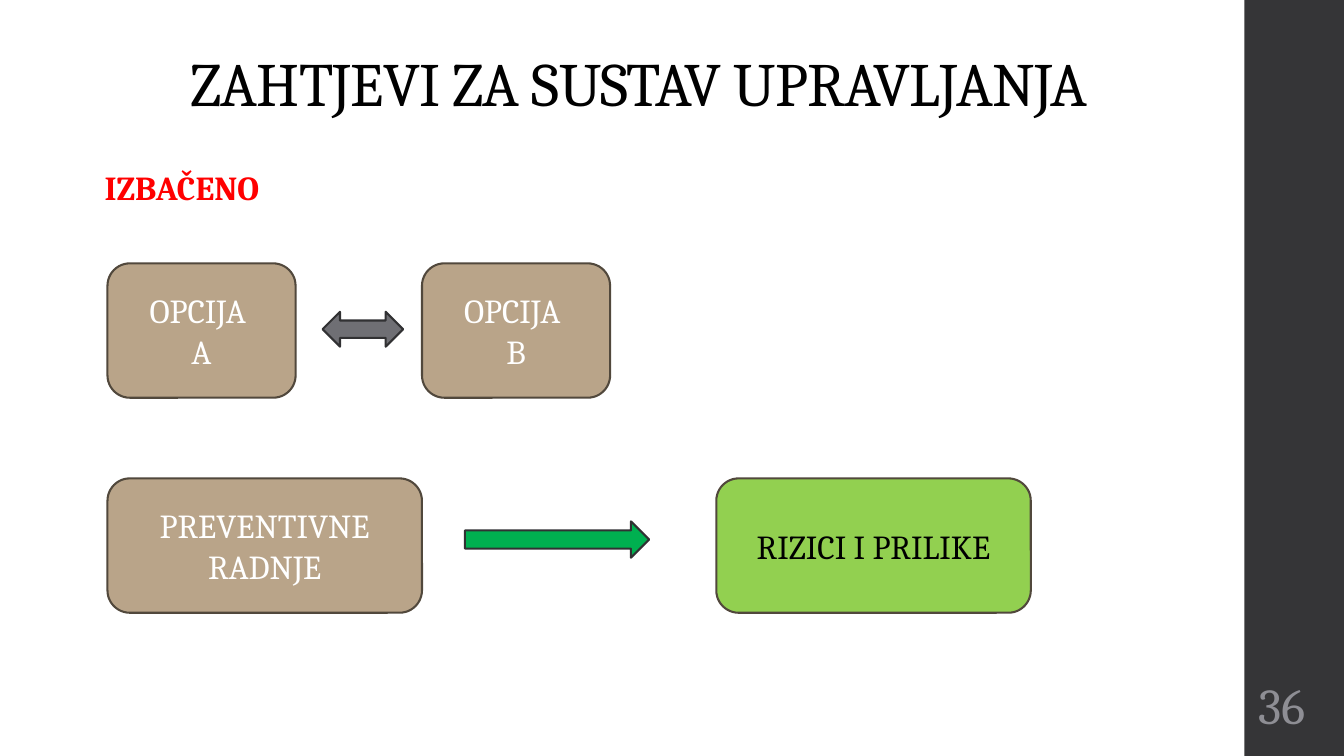
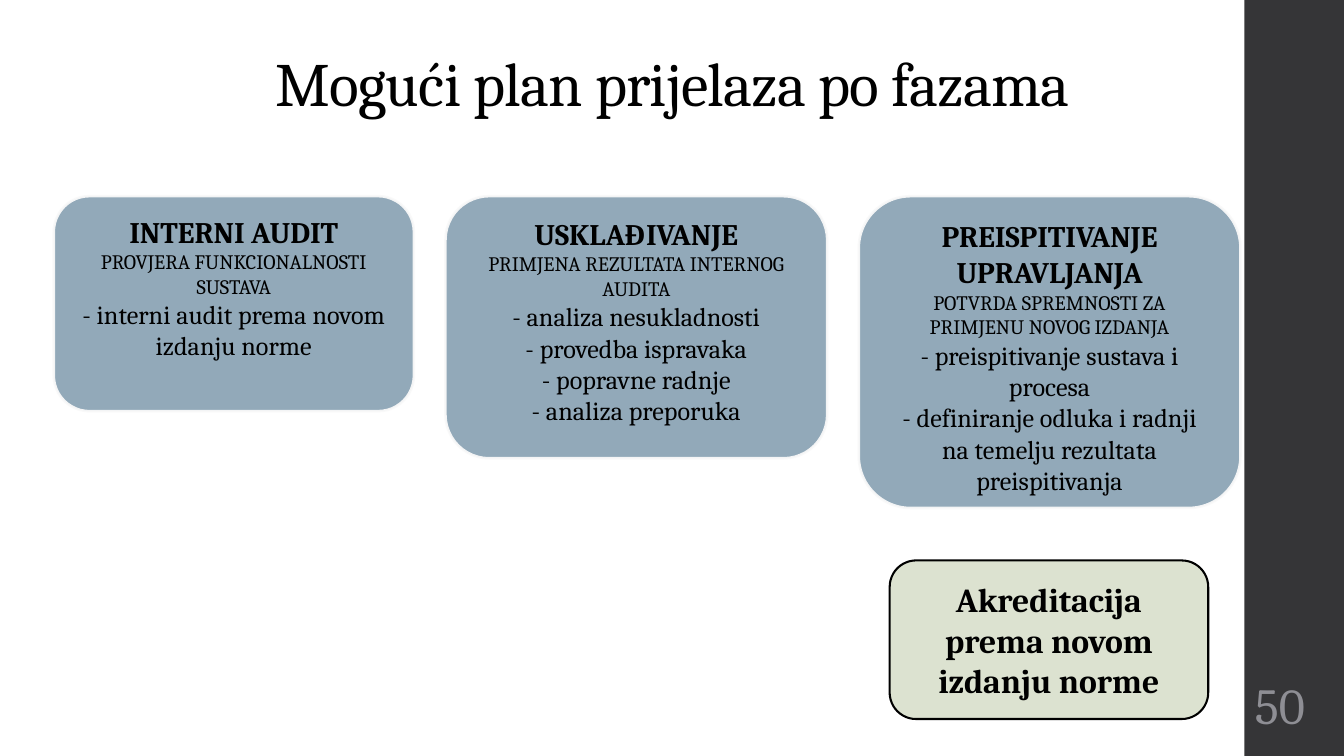
from dataclasses import dataclass
from typing import Any

from lxml.etree import SubElement
from pptx import Presentation
from pptx.dml.color import RGBColor
from pptx.enum.shapes import MSO_SHAPE
from pptx.enum.text import MSO_ANCHOR, MSO_AUTO_SIZE, PP_ALIGN
from pptx.oxml.ns import qn
from pptx.util import Inches, Pt

SLIDE_WIDTH = Inches(10)
SLIDE_HEIGHT = SLIDE_WIDTH * 9 // 16
UNIT = SLIDE_WIDTH // 100
TITLE_ONLY = 5

FONT = "Cambria"
BLACK, WHITE, RED = "000000", "FFFFFF", "FF0000"
BAND, NUMBER = "353537", "8E8E94"
TAN, TAN_EDGE = "B9A489", "51483C"
LIME, GREEN = "92D050", "00B050"
GREY, ARROW_EDGE = "6F6F74", "313133"
BLUE, PALE_EDGE, SAGE = "92A9B9", "F9F9F9", "DCE2D0"

FLUSH = dict.fromkeys(("margin_left", "margin_top", "margin_right", "margin_bottom"), 0)
FRAME = {"word_wrap": True, "auto_size": MSO_AUTO_SIZE.NONE}


@dataclass(frozen=True)
class Area:
    col: float
    row: float
    cols: float
    rows: float

    def emu(self) -> tuple[int, ...]:
        return tuple(round(n * UNIT) for n in (self.col, self.row, self.cols, self.rows))


@dataclass(frozen=True)
class Line:
    text: str
    size: float = 18
    color: str = BLACK
    bold: bool = False
    align: PP_ALIGN = PP_ALIGN.CENTER


@dataclass(frozen=True)
class Block:
    area: Area
    fill: str
    edge: str | None = None
    lines: tuple[Line, ...] = ()
    kind: MSO_SHAPE = MSO_SHAPE.ROUNDED_RECTANGLE
    anchor: MSO_ANCHOR = MSO_ANCHOR.MIDDLE
    edge_width: float = 1.1
    edge_opacity: int = 100


@dataclass(frozen=True)
class Phase:
    cols: float
    rows: float
    heading: tuple[str, ...]
    purpose: str
    steps: tuple[str, ...]


def rgb(value: str) -> RGBColor:
    return RGBColor.from_string(value)


def apply(target: Any, formats: dict[str, Any]) -> None:
    for name, value in formats.items():
        setattr(target, name, value)


def write(frame: Any, lines: tuple[Line, ...], anchor: MSO_ANCHOR, **extra: Any) -> None:
    apply(frame, FRAME | {"vertical_anchor": anchor} | extra)
    for index, line in enumerate(lines):
        paragraph = frame.add_paragraph() if index else frame.paragraphs[0]
        paragraph.alignment = line.align
        run = paragraph.add_run()
        run.text = line.text
        apply(run.font, {"name": FONT, "size": Pt(line.size), "bold": line.bold})
        run.font.color.rgb = rgb(line.color)


def draw_block(slide: Any, block: Block) -> None:
    shape = slide.shapes.add_shape(block.kind, *block.area.emu())
    shape.shadow.inherit = False
    shape.fill.solid()
    shape.fill.fore_color.rgb = rgb(block.fill)
    if block.edge is None:
        shape.line.fill.background()
    else:
        shape.line.color.rgb = rgb(block.edge)
        shape.line.width = Pt(block.edge_width)
        if block.edge_opacity < 100:
            color = shape.line._ln.find(".//" + qn("a:srgbClr"))
            SubElement(color, qn("a:alpha"), val=str(block.edge_opacity * 1000))
    if block.lines:
        write(shape.text_frame, block.lines, block.anchor)


def draw_text(slide: Any, area: Area, line: Line, anchor: MSO_ANCHOR, **extra: Any) -> None:
    box = slide.shapes.add_textbox(*area.emu())
    write(box.text_frame, (line,), anchor, **extra)


def start_slide(deck: Any, title: str, title_area: Area, number: int) -> Any:
    slide = deck.slides.add_slide(deck.slide_layouts[TITLE_ONLY])
    draw_block(slide, Block(Area(92.6, 0, 7.4, SLIDE_HEIGHT / UNIT), BAND, kind=MSO_SHAPE.RECTANGLE))
    heading = slide.shapes.title
    apply(heading, dict(zip(("left", "top", "width", "height"), title_area.emu())))
    write(heading.text_frame, (Line(title, 33),), MSO_ANCHOR.BOTTOM, **FLUSH)
    paragraph = heading.text_frame.paragraphs[0]
    paragraph.line_spacing = 0.9
    paragraph.runs[0]._r.get_or_add_rPr().set("spc", "-40")
    draw_text(slide, Area(91.1, 50.3, 6, 4.3), Line(str(number), 27, NUMBER, align=PP_ALIGN.RIGHT),
              MSO_ANCHOR.MIDDLE, **FLUSH)
    return slide


def requirements_slide(deck: Any) -> None:
    slide = start_slide(deck, "ZAHTJEVI ZA SUSTAV UPRAVLJANJA", Area(4.1, 4.6, 86.9, 4.3), 36)
    draw_text(slide, Area(6.8, 11.9, 77.3, 13.1),
              Line("IZBAČENO", color=RED, bold=True, align=PP_ALIGN.JUSTIFY), MSO_ANCHOR.TOP)
    left, option_row, action_row, height = 8, 19.6, 35.6, 10
    option_cols, action_cols = 14, 23.4
    for index, letter in enumerate("AB"):
        area = Area(left + index * action_cols, option_row, option_cols, height)
        draw_block(slide, Block(area, TAN, TAN_EDGE, (Line("OPCIJA ", color=WHITE), Line(letter, color=WHITE))))
    for block in (
        Block(Area(24, 23.2, 6, 2.6), GREY, ARROW_EDGE, kind=MSO_SHAPE.LEFT_RIGHT_ARROW),
        Block(Area(left, action_row, action_cols, height), TAN, TAN_EDGE,
              (Line("PREVENTIVNE RADNJE", color=WHITE),)),
        Block(Area(34.6, 38.8, 13.7, 2.7), GREEN, ARROW_EDGE, kind=MSO_SHAPE.RIGHT_ARROW),
        Block(Area(53.3, action_row, action_cols, height), LIME, TAN_EDGE, (Line("RIZICI I PRILIKE"),)),
    ):
        draw_block(slide, block)


PHASES = (
    Phase(26.8, 16, ("INTERNI AUDIT",), "PROVJERA FUNKCIONALNOSTI SUSTAVA",
          ("interni audit prema novom izdanju norme",)),
    Phase(28.4, 19.5, ("USKLAĐIVANJE",), "PRIMJENA REZULTATA INTERNOG AUDITA",
          ("analiza nesukladnosti", "provedba ispravaka", "popravne radnje", "analiza preporuka")),
    Phase(28.4, 23.2, ("PREISPITIVANJE", "UPRAVLJANJA"), "POTVRDA SPREMNOSTI ZA PRIMJENU NOVOG IZDANJA",
          ("preispitivanje sustava i procesa",
           "definiranje odluka i radnji na temelju rezultata preispitivanja")),
)


def phases_slide(deck: Any) -> None:
    slide = start_slide(deck, "Mogući plan prijelaza po fazama", Area(11.4, 4.6, 77.3, 4.3), 50)
    col, row, gap = 4, 14.6, 2.35
    for phase in PHASES:
        lines = (
            *(Line(text, 16, bold=True) for text in phase.heading),
            Line(phase.purpose, 11),
            *(Line(f"- {step}", 14) for step in phase.steps),
        )
        draw_block(slide, Block(Area(col, row, phase.cols, phase.rows), BLUE, PALE_EDGE, lines,
                                anchor=MSO_ANCHOR.TOP, edge_width=1.35, edge_opacity=95))
        col += phase.cols + gap
    draw_block(slide, Block(Area(66.2, 41.7, 23.7, 11.8), SAGE, BLACK,
                            (Line("Akreditacija prema novom izdanju norme", bold=True),)))


def main() -> None:
    deck = Presentation()
    apply(deck, {"slide_width": SLIDE_WIDTH, "slide_height": SLIDE_HEIGHT})
    requirements_slide(deck)
    phases_slide(deck)
    deck.save("out.pptx")


if __name__ == "__main__":
    main()
